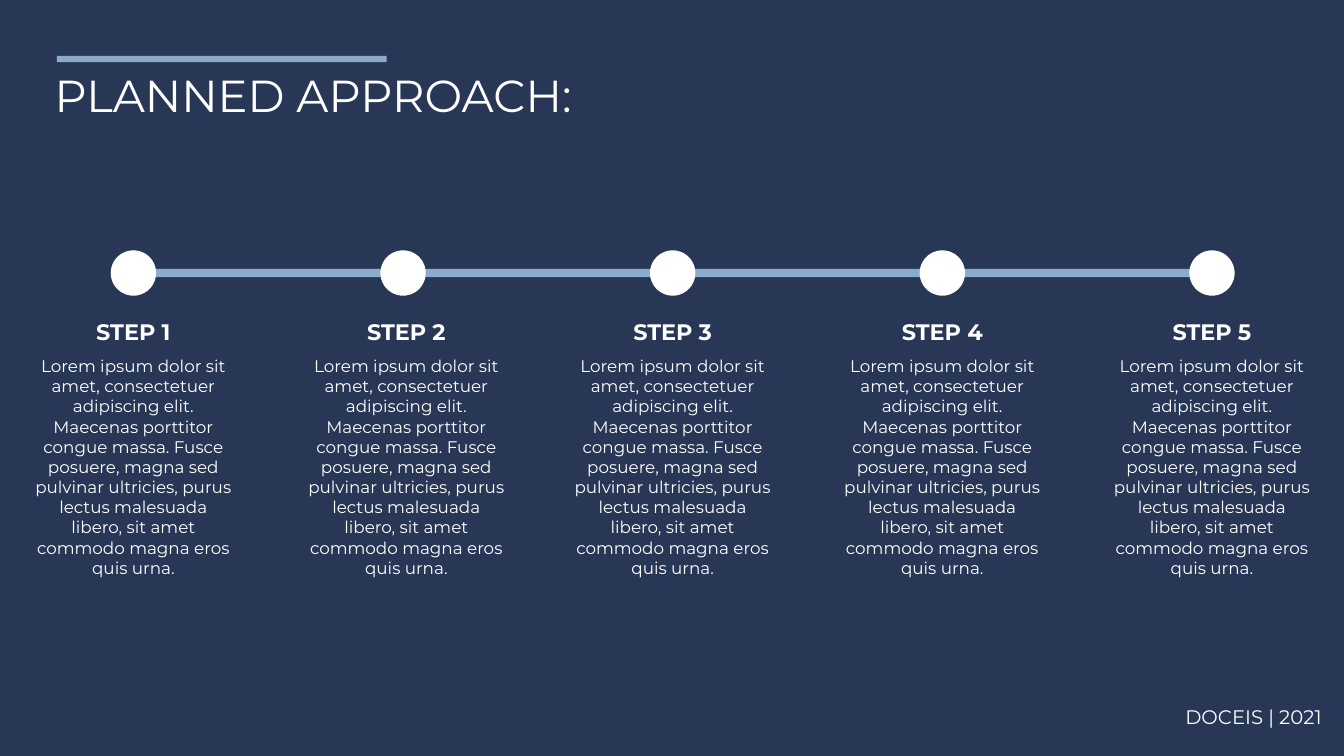
import pptx
import pptx.dml.color
import pptx.enum.shapes
import pptx.enum.text
import pptx.util
from dataclasses import dataclass

Pt = pptx.util.Pt
ALIGN = pptx.enum.text.PP_ALIGN
SHAPE = pptx.enum.shapes.MSO_SHAPE

# Content
TITLE = "PLANNED APPROACH:"
FOOTER = "DOCEIS | 2021"
DETAIL = (
    "Lorem ipsum dolor sit amet, consectetuer adipiscing elit. Maecenas "
    "porttitor congue massa. Fusce posuere, magna sed pulvinar ultricies, "
    "purus lectus malesuada libero, sit amet commodo magna eros quis urna."
)
# Heading, detail, sideways shift of the text from its marker
STEPS = [
    ("STEP 1", DETAIL, 0),
    ("STEP 2", DETAIL, 2.4),
    ("STEP 3", DETAIL, 0),
    ("STEP 4", DETAIL, 0),
    ("STEP 5", DETAIL, 0),
]


@dataclass(frozen=True)
class Theme:
    font: str = "Montserrat"
    background: str = "273755"
    accent: str = "8AABCA"
    light: str = "FFFFFF"
    title_size: int = 32
    heading_size: int = 16
    detail_size: int = 12
    footer_size: int = 14


THEME = Theme()

# Timeline geometry, in points
FIRST_CENTER, STEP_GAP = 95.3, 192.6
AXIS_Y, AXIS_HEIGHT, MARKER_SIZE = 195, 5.8, 32.4
HEADING_TOP, HEADING_WIDTH, HEADING_HEIGHT = 224, 83, 26.6
DETAIL_TOP, DETAIL_WIDTH, DETAIL_HEIGHT = 250.6, 158.4, 167


def color(value):
    return pptx.dml.color.RGBColor.from_string(value)


def add_solid(slide, kind, fill, left, top, width, height):
    solid = slide.shapes.add_shape(kind, Pt(left), Pt(top), Pt(width), Pt(height))
    solid.shadow.inherit = False
    solid.fill.solid()
    solid.fill.fore_color.rgb = color(fill)
    solid.line.fill.background()


def write(frame, text, size, align, bold=False):
    frame.text = text
    paragraph = frame.paragraphs[0]
    paragraph.alignment = align
    font = paragraph.runs[0].font
    font.name = THEME.font
    font.size = Pt(size)
    font.bold = bold
    font.color.rgb = color(THEME.light)


def add_text(slide, text, size, align, left, top, width, height, bold=False):
    label = slide.shapes.add_textbox(Pt(left), Pt(top), Pt(width), Pt(height))
    label.text_frame.word_wrap = True
    write(label.text_frame, text, size, align, bold)


def add_title(slide):
    add_solid(slide, SHAPE.RECTANGLE, THEME.accent, 40.7, 40, 235.5, 4.4)
    title = slide.shapes.title
    title.left, title.top = Pt(39), Pt(44.6)
    title.width, title.height = Pt(396.7), Pt(46)
    frame = title.text_frame
    frame.margin_left = 0
    frame.word_wrap = False
    frame.auto_size = pptx.enum.text.MSO_AUTO_SIZE.NONE
    frame.vertical_anchor = pptx.enum.text.MSO_ANCHOR.TOP
    write(frame, TITLE, THEME.title_size, ALIGN.LEFT)


def add_timeline(slide):
    # Axis from the first marker to the last
    add_solid(slide, SHAPE.RECTANGLE, THEME.accent, FIRST_CENTER,
              AXIS_Y - AXIS_HEIGHT / 2, STEP_GAP * (len(STEPS) - 1), AXIS_HEIGHT)

    # Marker, heading and detail of each step
    for index, (heading, detail, shift) in enumerate(STEPS):
        center = FIRST_CENTER + index * STEP_GAP
        add_solid(slide, SHAPE.OVAL, THEME.light, center - MARKER_SIZE / 2,
                  AXIS_Y - MARKER_SIZE / 2, MARKER_SIZE, MARKER_SIZE)
        middle = center + shift
        add_text(slide, heading, THEME.heading_size, ALIGN.CENTER,
                 middle - HEADING_WIDTH / 2, HEADING_TOP,
                 HEADING_WIDTH, HEADING_HEIGHT, bold=True)
        add_text(slide, detail, THEME.detail_size, ALIGN.CENTER,
                 middle - DETAIL_WIDTH / 2, DETAIL_TOP,
                 DETAIL_WIDTH, DETAIL_HEIGHT)


def main():
    deck = pptx.Presentation()
    deck.slide_width, deck.slide_height = Pt(960), Pt(540)
    slide = deck.slides.add_slide(deck.slide_layouts[5])
    slide.background.fill.solid()
    slide.background.fill.fore_color.rgb = color(THEME.background)

    add_title(slide)
    add_timeline(slide)

    # Footer
    add_text(slide, FOOTER, THEME.footer_size, ALIGN.RIGHT, 747.4, 499.7, 203.8, 24.5)
    deck.save("out.pptx")


if __name__ == "__main__":
    main()
